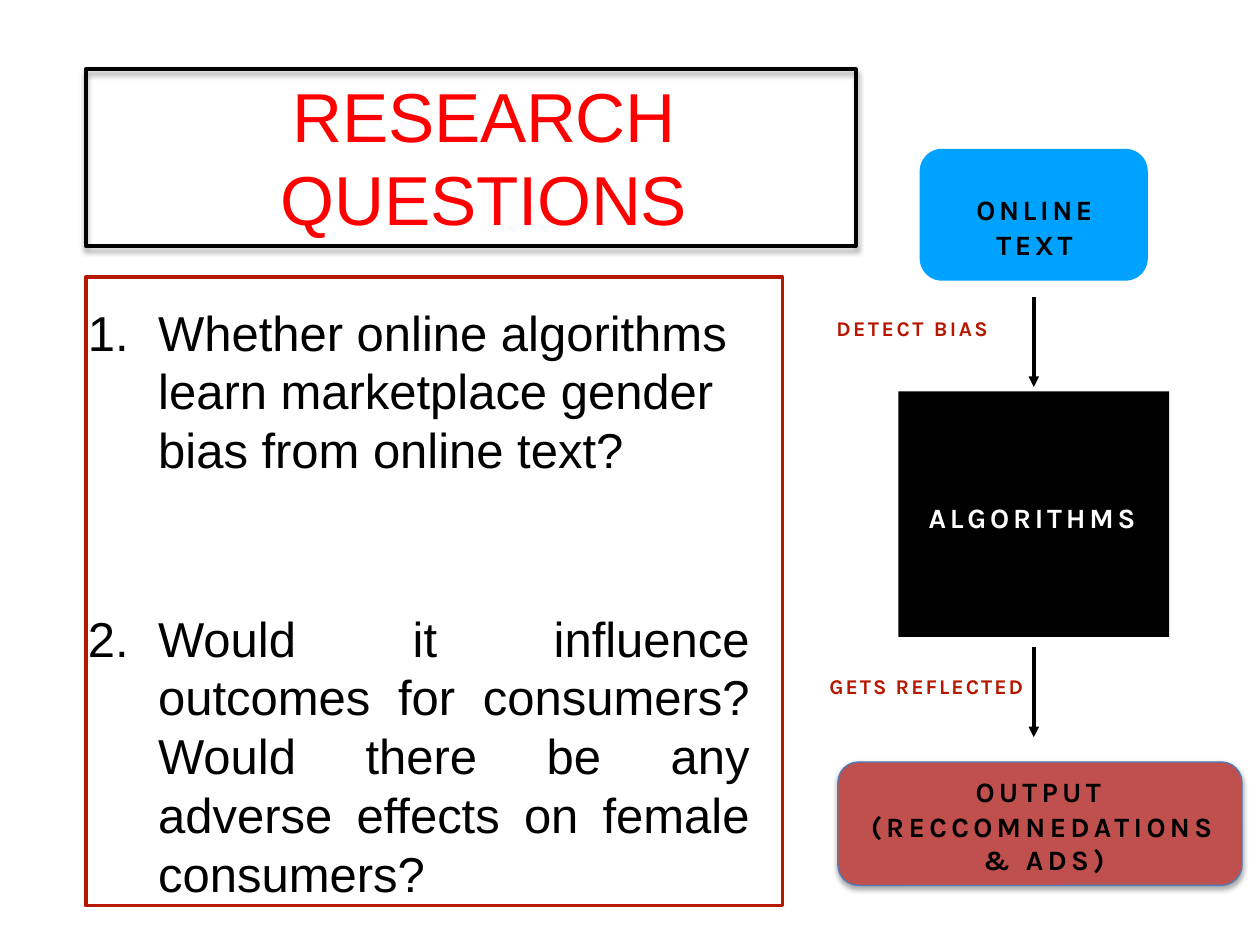
"""Build the research questions slide with its algorithm flow diagram."""
from dataclasses import dataclass

from lxml import etree
from pptx import Presentation
from pptx import util as u
from pptx.dml.color import RGBColor
from pptx.enum import shapes, text
from pptx.oxml import parse_xml
from pptx.oxml.ns import nsdecls, qn


@dataclass(frozen=True)
class Theme:
    black: str = "000000"
    white: str = "FFFFFF"
    red: str = "FF0000"
    brick: str = "B51700"
    blue: str = "00A2FF"
    rose: str = "C0504D"
    edge: str = "4B7EBC"
    body_font: str = "Arial"
    flow_font: str = "Karla"
    title_size: float = 39.6
    body_size: float = 28
    flow_size: float = 16
    label_size: float = 12


THEME = Theme()
RECTANGLE = shapes.MSO_SHAPE.RECTANGLE
ROUNDED = shapes.MSO_SHAPE.ROUNDED_RECTANGLE
CENTER, LEFT, JUSTIFY = text.PP_ALIGN.CENTER, text.PP_ALIGN.LEFT, text.PP_ALIGN.JUSTIFY

TITLE = ("RESEARCH QUESTIONS", (2.26, 1.5, 14.99, 3.3))
QUESTIONS = [
    ("Whether online algorithms learn marketplace gender bias from online text?", LEFT, 0),
    ("Would it influence outcomes for consumers? Would there be any adverse effects "
     "on female consumers?", JUSTIFY, 74),
]
BOXES = {
    "output": (ROUNDED, (16.89, 15.36, 8.15, 2.49), THEME.rose, THEME.edge, 0.75, True),
    "title frame": (RECTANGLE, (1.73, 1.4, 15.52, 3.56), None, THEME.black, 2.25, True),
    "questions": (RECTANGLE, (1.73, 5.59, 14.05, 12.67), None, THEME.brick, 2, False),
    "online text": (ROUNDED, (18.54, 3, 4.6, 2.66), THEME.blue, None, 0, False),
    "algorithms": (RECTANGLE, (18.11, 7.89, 5.46, 4.95), THEME.black, None, 0, False),
}
CAPTIONS = [
    (["ONLINE", "TEXT"], (19.39, 3.86, 2.9, 1.42), THEME.flow_size, THEME.black, CENTER, 2.1),
    (["OUTPUT ", "(RECCOMNEDATIONS & ADS)"], (17.27, 15.58, 7.52, 2.11),
     THEME.flow_size, THEME.black, CENTER, 2.5),
    (["DETECT BIAS"], (16.83, 6.34, 3.73, 0.53), THEME.label_size, THEME.brick, LEFT, 1.45),
    (["GETS REFLECTED"], (16.69, 13.54, 4.01, 0.53), THEME.label_size, THEME.brick, LEFT, 1.15),
]
ARROW_X, ARROW_LENGTH, ARROW_TOPS = 20.84, 1.81, (5.99, 13.05)


def lengths(values):
    return [u.Cm(value) for value in values]


def style_font(paragraph, name, size, color, bold=False, spacing=0):
    font = paragraph.font
    font.name, font.size, font.bold = name, u.Pt(size), bold
    font.color.rgb = RGBColor.from_string(color)
    if spacing:
        for run in paragraph.runs:
            run.font._element.set("spc", str(round(spacing * 100)))


def set_insets(frame, left=0, top=0, right=0):
    frame.margin_left, frame.margin_top, frame.margin_right = lengths((left, top, right))
    frame.margin_bottom = 0
    frame.word_wrap = True


def add_box(slide, preset, place, fill, line, width, shadow):
    shape = slide.shapes.add_shape(preset, *lengths(place))
    shape.shadow.inherit = False
    if fill:
        shape.fill.solid()
        shape.fill.fore_color.rgb = RGBColor.from_string(fill)
    else:
        shape.fill.background()
    if line:
        shape.line.color.rgb = RGBColor.from_string(line)
        shape.line.width = u.Pt(width)
    else:
        shape.line.fill.background()
    if shadow:
        effects = shape._element.spPr.find(qn("a:effectLst"))
        effects.append(parse_xml(
            f'<a:outerShdw {nsdecls("a")} blurRad="39370" dist="22860" dir="5400000" '
            f'rotWithShape="0"><a:srgbClr val="{THEME.black}"><a:alpha val="35000"/>'
            '</a:srgbClr></a:outerShdw>'))
    return shape


def write_title(slide):
    wording, place = TITLE
    title = slide.shapes.title
    title.left, title.top, title.width, title.height = lengths(place)
    frame = title.text_frame
    frame.text = wording
    frame.auto_size = text.MSO_AUTO_SIZE.NONE
    frame.vertical_anchor = text.MSO_ANCHOR.MIDDLE
    paragraph = frame.paragraphs[0]
    paragraph.alignment = CENTER
    style_font(paragraph, THEME.body_font, THEME.title_size, THEME.red, spacing=-0.1)


def write_questions(shape):
    frame = shape.text_frame
    set_insets(frame, top=0.5, right=0.67)
    frame.vertical_anchor = text.MSO_ANCHOR.TOP
    for number, (wording, alignment, gap) in enumerate(QUESTIONS, 1):
        paragraph = frame.paragraphs[0] if number == 1 else frame.add_paragraph()
        paragraph.text = wording
        paragraph.alignment = alignment
        paragraph.space_before = u.Pt(gap)
        style_font(paragraph, THEME.body_font, THEME.body_size, THEME.black)
        properties = paragraph._p.get_or_add_pPr()
        properties.set("marL", str(u.Cm(1.46)))
        properties.set("indent", str(-u.Cm(1.42)))
        bullet = parse_xml(f'<a:buAutoNum {nsdecls("a")} type="arabicPeriod" startAt="{number}"/>')
        properties.find(qn("a:defRPr")).addprevious(bullet)


def write_algorithms(shape):
    frame = shape.text_frame
    set_insets(frame, left=0.61, top=0.14)
    frame.vertical_anchor = text.MSO_ANCHOR.MIDDLE
    frame.text = "ALGORITHMS"
    paragraph = frame.paragraphs[0]
    paragraph.alignment = LEFT
    style_font(paragraph, THEME.flow_font, THEME.flow_size, THEME.white, True, 2.2)


def add_caption(slide, lines, place, size, color, alignment, spacing):
    frame = slide.shapes.add_textbox(*lengths(place)).text_frame
    set_insets(frame, left=0.03, top=0.03)
    frame.text = "\n".join(lines)
    for paragraph in frame.paragraphs:
        paragraph.alignment = alignment
        paragraph.space_before = u.Pt(0.7)
        style_font(paragraph, THEME.flow_font, size, color, True, spacing)


def add_arrow(slide, top):
    arrow = slide.shapes.add_connector(
        shapes.MSO_CONNECTOR.STRAIGHT,
        *lengths((ARROW_X, top, ARROW_X, top + ARROW_LENGTH)))
    arrow.line.color.rgb = RGBColor.from_string(THEME.black)
    arrow.line.width = u.Pt(2)
    etree.SubElement(arrow.line._get_or_add_ln(), qn("a:tailEnd"), type="triangle")
    etree.SubElement(arrow._element.spPr, qn("a:effectLst"))


def main():
    presentation = Presentation()
    presentation.slide_width, presentation.slide_height = lengths((25.4, 19.05))
    slide = presentation.slides.add_slide(presentation.slide_layouts[5])
    write_title(slide)
    boxes = {name: add_box(slide, *box) for name, box in BOXES.items()}
    boxes["online text"].adjustments[0] = 0.17
    write_questions(boxes["questions"])
    write_algorithms(boxes["algorithms"])
    for caption in CAPTIONS:
        add_caption(slide, *caption)
    for top in ARROW_TOPS:
        add_arrow(slide, top)
    presentation.save("out.pptx")


if __name__ == "__main__":
    main()
